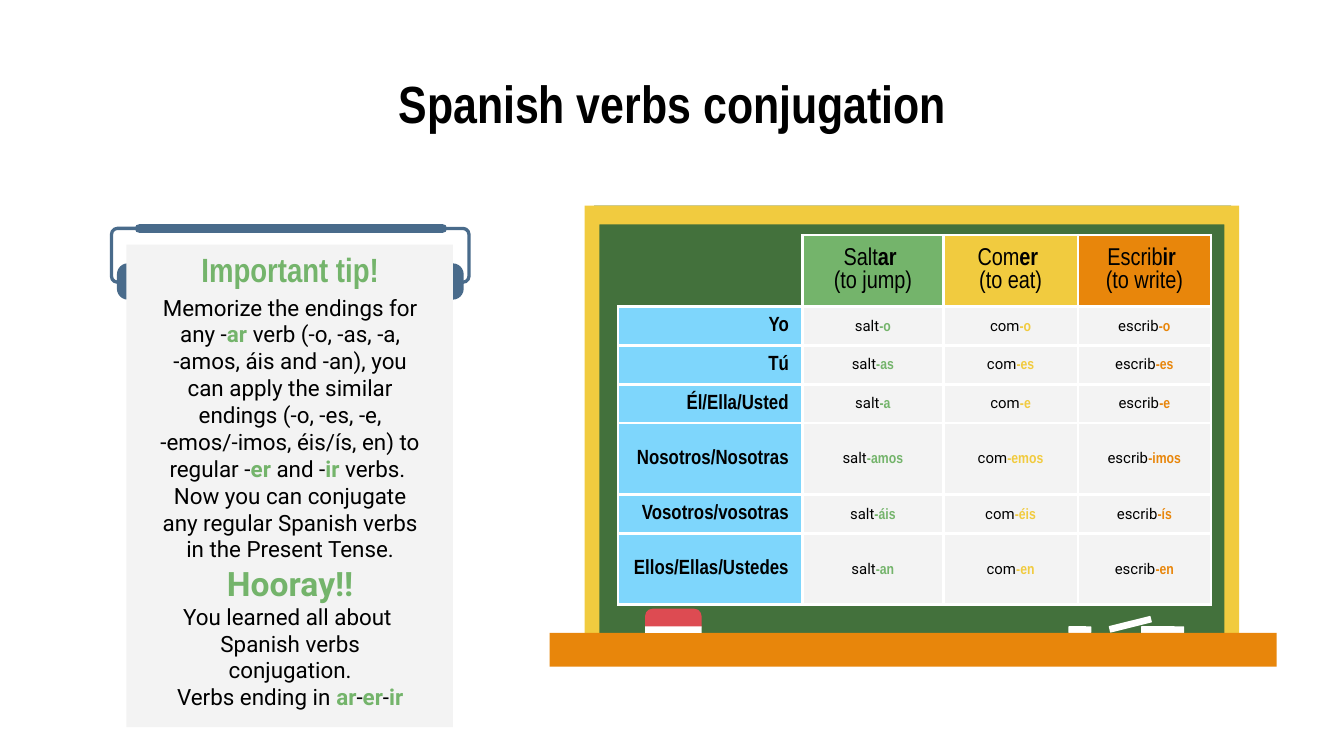
from lxml.etree import SubElement
from pptx import Presentation
from pptx.dml.color import RGBColor
from pptx.enum.shapes import MSO_CONNECTOR, MSO_SHAPE as SHAPE
from pptx.enum.text import MSO_ANCHOR as ANCHOR, PP_ALIGN as ALIGN
from pptx.oxml.ns import qn
from pptx.util import Pt

PX = 9144
COLORS = {
    "black": "000000", "white": "FFFFFF", "paper": "F3F3F3", "steel": "496B8B",
    "green": "74B46B", "yellow": "F1CB3F", "orange": "E8860B", "blue": "7ED6FC",
    "board": "43713C", "red": "DD4B52",
}
RGB = {name: RGBColor.from_string(value) for name, value in COLORS.items()}
NARROW, ROBOTO = "Arial Narrow", "Roboto"


def write(paragraph, text, plain, accent, align=ALIGN.CENTER):
    paragraph.alignment = align
    for index, part in enumerate(text.split("*")):
        if part:
            run = paragraph.add_run()
            run.text = part
            values = dict(plain, **accent) if index % 2 else dict(plain)
            run.font.color.rgb = RGB[values.pop("color")]
            for name, value in values.items():
                setattr(run.font, name, value)


def add_block(kind, left, top, width, height, color):
    shape = slide.shapes.add_shape(kind, left * PX, top * PX, width * PX, height * PX)
    shape.shadow.inherit = False
    shape.fill.solid()
    shape.fill.fore_color.rgb = RGB[color]
    shape.line.fill.background()
    return shape


presentation = Presentation()
presentation.slide_width = 1000 * PX
presentation.slide_height = presentation.slide_width * 9 // 16
slide = presentation.slides.add_slide(presentation.slide_layouts[5])

for left in (87, 327):
    tab = add_block(SHAPE.ROUNDED_RECTANGLE, left, 196, 18, 27, "steel")
    tab.adjustments[0] = 0.45
handle = add_block(SHAPE.ROUNDED_RECTANGLE, 83, 170, 266, 40, "steel")
handle.adjustments[0] = 0.11
handle.fill.background()
handle.line.color.rgb = RGB["steel"]
handle.line.width = Pt(1.75)

bar = slide.shapes.add_connector(MSO_CONNECTOR.STRAIGHT, 104 * PX, 170 * PX, 329 * PX, 170 * PX)
bar.line.color.rgb = RGB["steel"]
bar.line.width = Pt(5.29)
bar_properties = bar._element.spPr
bar_properties.find(qn("a:ln")).set("cap", "rnd")
SubElement(bar_properties, qn("a:effectLst"))

title = slide.shapes.title
title_box = {"left": 50, "top": 45, "width": 900, "height": 63}
for name, value in title_box.items():
    setattr(title, name, value * PX)
title.text_frame.vertical_anchor = ANCHOR.MIDDLE
write(title.text_frame.paragraphs[0], "Spanish verbs conjugation",
      {"size": Pt(28), "name": NARROW, "bold": True, "color": "black"}, {})

add_block(SHAPE.RECTANGLE, 94, 182, 243, 359, "paper")

body = {"size": Pt(12), "name": ROBOTO, "bold": False, "color": "black"}
highlight = {"bold": True, "color": "green"}
heading = dict(body, size=Pt(18), **highlight)
tip_boxes = [
    (187, 26, 10, [("Important tip!", dict(heading, name=NARROW))]),
    (235, 298, 31, [
        ("Memorize the endings for any -*ar *verb (-o, -as, -a, -amos, áis and -an), "
         "you can apply the similar endings (-o, -es, -e, -emos/-imos, éis/ís, en) "
         "to regular -*er* and -*ir *verbs. ", body),
        ("Now you can conjugate any regular Spanish verbs in the Present Tense.", body),
        ("Hooray!!", heading),
        ("You learned all about ", body),
        ("Spanish verbs conjugation.", body),
        ("Verbs ending in *ar*-*er*-*ir*", body),
    ]),
]
for top, height, bottom_inset, lines in tip_boxes:
    frame = slide.shapes.add_textbox(108 * PX, top * PX, 216 * PX, height * PX).text_frame
    frame_format = {
        "word_wrap": True, "vertical_anchor": ANCHOR.MIDDLE,
        "margin_left": 10 * PX, "margin_right": 10 * PX,
        "margin_top": 10 * PX, "margin_bottom": bottom_inset * PX,
    }
    for name, value in frame_format.items():
        setattr(frame, name, value)
    for index, (text, plain) in enumerate(lines):
        paragraph = frame.add_paragraph() if index else frame.paragraphs[0]
        write(paragraph, text, plain, highlight)

add_block(SHAPE.RECTANGLE, 442, 153, 474, 322, "board")
builder = slide.shapes.build_freeform(435, 153, scale=PX)
builder.add_line_segments([(435, 490), (922, 490), (922, 153)], close=True)
builder.move_to(911, 167)
builder.add_line_segments([(911, 477), (446, 477), (446, 167)], close=True)
board_frame = builder.convert_to_shape()
board_frame.shadow.inherit = False
board_frame.fill.solid()
board_frame.fill.fore_color.rgb = RGB["yellow"]
board_frame.line.fill.background()

for left, top, width, height, angle in [
    (849, 466, 32, 5, 0), (795, 466, 17, 5, 0), (825, 462, 32, 5, -14),
]:
    chalk = add_block(SHAPE.ROUNDED_RECTANGLE, left, top, width, height, "white")
    chalk.adjustments[0] = 0.1
    chalk.rotation = angle
add_block(SHAPE.RECTANGLE, 409, 471, 541, 25, "orange")
eraser = add_block(SHAPE.ROUND_2_SAME_RECTANGLE, 480, 453, 42, 14, "red")
eraser.adjustments[0] = 0.38
add_block(SHAPE.RECTANGLE, 480, 466, 42, 5, "white")

verbs = [
    ("Salt*ar *", "(to jump)", "salt", "green"),
    ("Com*er *", "(to eat)", "com", "yellow"),
    ("Escrib*ir *", "(to write)", "escrib", "orange"),
]
endings = [
    ("Yo", "-o", "-o", "-o"),
    ("Tú", "-as", "-es", "-es"),
    ("Él/Ella/Usted", "-a", "-e", "-e"),
    ("Nosotros/Nosotras", "-amos", "-emos", "-imos"),
    ("Vosotros/vosotras", "-áis", "-éis", "-ís"),
    ("Ellos/Ellas/Ustedes", "-an", "-en", "-en"),
]
column_widths = [137, 105, 100, 99]
row_heights = [53, 29, 29, 29, 53, 29, 53]
table = slide.shapes.add_table(7, 4, 460 * PX, 175 * PX, sum(column_widths) * PX,
                               sum(row_heights) * PX).table
table.first_row = table.horz_banding = False
for column, width in zip(table.columns, column_widths):
    column.width = width * PX
for row, height in zip(table.rows, row_heights):
    row.height = height * PX

header = {"size": Pt(13), "name": NARROW, "bold": False, "color": "black"}
pronoun = dict(header, size=Pt(11), bold=True)
stem_format = dict(body, size=Pt(8))
for row_index in range(7):
    for column_index in range(4):
        cell = table.cell(row_index, column_index)
        corner = row_index == column_index == 0
        properties = cell._tc.get_or_add_tcPr()
        for side in ("lnL", "lnR", "lnT", "lnB"):
            border = SubElement(properties, qn("a:" + side), w=str(Pt(1.5)))
            if corner and side in ("lnL", "lnT"):
                SubElement(border, qn("a:noFill"))
            else:
                fill = SubElement(border, qn("a:solidFill"))
                SubElement(fill, qn("a:srgbClr"), val=COLORS["white"])
        cell.vertical_anchor = ANCHOR.MIDDLE
        cell.margin_left = cell.margin_right = 10 * PX
        cell.margin_top = cell.margin_bottom = 0
        if corner:
            cell.fill.background()
            continue
        paragraph = cell.text_frame.paragraphs[0]
        if column_index == 0:
            color = "blue"
            write(paragraph, endings[row_index - 1][0], pronoun, {}, ALIGN.RIGHT)
        else:
            infinitive, meaning, stem, color = verbs[column_index - 1]
            if row_index == 0:
                write(paragraph, infinitive, header, {"bold": True})
                write(cell.text_frame.add_paragraph(), meaning, header, {})
            else:
                ending = {"name": NARROW, "bold": True, "color": color}
                write(paragraph, f"{stem}*{endings[row_index - 1][column_index]}*",
                      stem_format, ending)
                color = "paper"
        cell.fill.solid()
        cell.fill.fore_color.rgb = RGB[color]

presentation.save("out.pptx")
